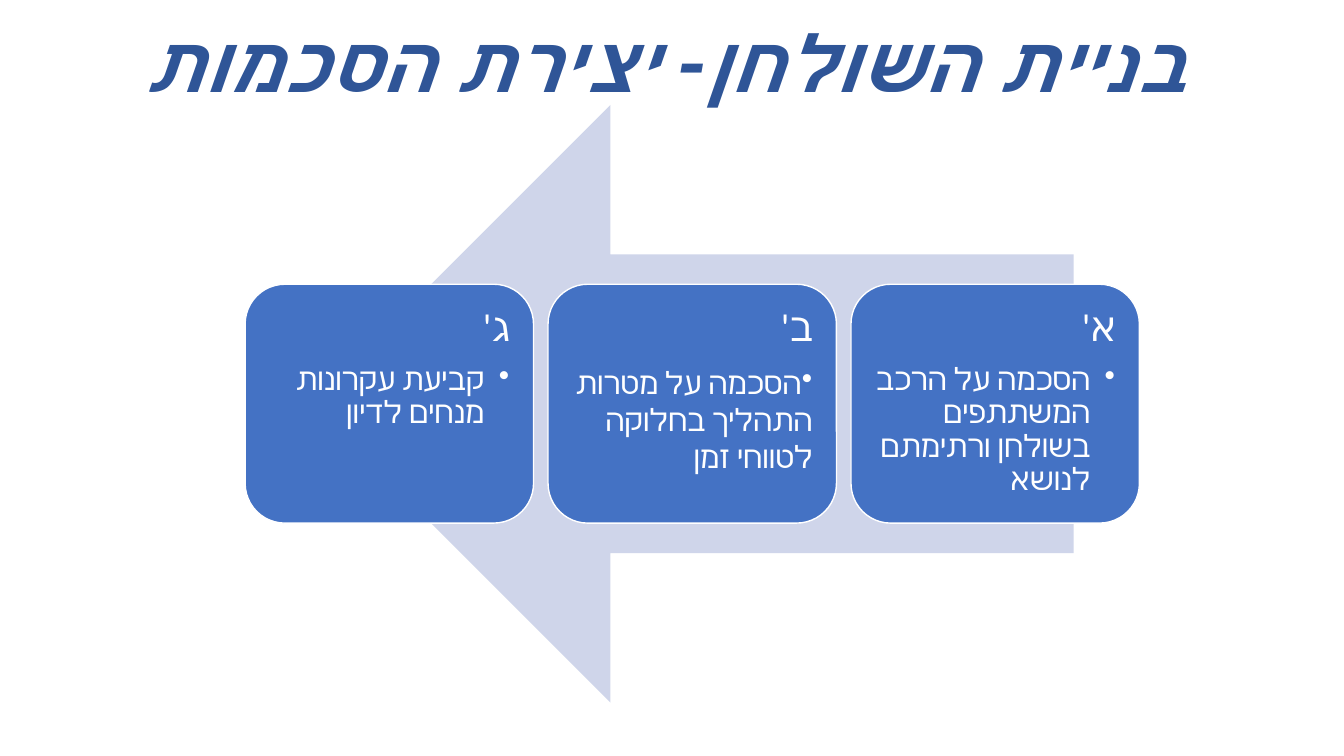
import dataclasses

import pptx
import pptx.dml.color
import pptx.enum.shapes
import pptx.enum.text
import pptx.oxml.ns
import pptx.util
from lxml import etree

Inches = pptx.util.Inches
Pt = pptx.util.Pt
Align = pptx.enum.text.PP_ALIGN
Anchor = pptx.enum.text.MSO_ANCHOR
Preset = pptx.enum.shapes.MSO_SHAPE
qn = pptx.oxml.ns.qn


@dataclasses.dataclass(frozen=True)
class Theme:
    title_color: str = "2F5597"
    arrow_color: str = "CFD5EA"
    card_color: str = "4472C4"
    white: str = "FFFFFF"
    title_font: str = "Roboto"
    body_font: str = "Calibri"
    title_size: int = 56
    heading_size: int = 28
    body_size: int = 22


def rgb(color):
    return pptx.dml.color.RGBColor.from_string(color)


def write(paragraph, text, *, font, size, color, bold=False, italic=False,
          align=Align.RIGHT, rtl=True, spacing=None, after=0, bullet=False, hang=0):
    """Fill a paragraph with one formatted run."""
    properties = paragraph._p.get_or_add_pPr()
    if rtl:
        properties.set("rtl", "1")
    if bullet:
        properties.set("marL", str(Inches(hang)))
        properties.set("indent", str(-Inches(hang)))
        etree.SubElement(properties, qn("a:buChar")).set("char", "•")
    paragraph.alignment = align
    paragraph.space_before = Pt(0)
    paragraph.space_after = Pt(after)
    if spacing:
        paragraph.line_spacing = spacing
    run = paragraph.add_run()
    run.text = text
    run.font.name = font
    run.font.size = Pt(size)
    run.font.bold = bold
    run.font.italic = italic
    run.font.color.rgb = rgb(color)
    # Hebrew takes the complex-script typeface
    etree.SubElement(run._r.get_or_add_rPr(), qn("a:cs")).set("typeface", font)


class SlideBuilder:
    """Places elements by percentages of the slide's width and height."""

    def __init__(self, presentation, theme):
        self.theme = theme
        self.width = presentation.slide_width
        self.height = presentation.slide_height
        self.slide = presentation.slides.add_slide(presentation.slide_layouts[6])

    def place(self, left, top, width, height):
        return (int(self.width * left / 100), int(self.height * top / 100),
                int(self.width * width / 100), int(self.height * height / 100))

    def title(self, text, area):
        box = self.slide.shapes.add_textbox(*self.place(*area))
        frame = box.text_frame
        frame.word_wrap = True
        frame.vertical_anchor = Anchor.MIDDLE
        frame.margin_right = Inches(0.45)
        write(frame.paragraphs[0], text, font=self.theme.title_font,
              size=self.theme.title_size, color=self.theme.title_color,
              bold=True, italic=True, align=Align.CENTER, rtl=False, spacing=0.7)

    def shape(self, preset, area, fill, line=None):
        shape = self.slide.shapes.add_shape(preset, *self.place(*area))
        shape.shadow.inherit = False
        shape.fill.solid()
        shape.fill.fore_color.rgb = rgb(fill)
        if line:
            shape.line.color.rgb = rgb(line)
            shape.line.width = Pt(1)
        else:
            shape.line.fill.background()
        return shape

    def card(self, heading, body, area, **body_format):
        theme = self.theme
        card = self.shape(Preset.ROUNDED_RECTANGLE, area, theme.card_color, theme.white)
        frame = card.text_frame
        frame.word_wrap = True
        frame.vertical_anchor = Anchor.TOP
        frame.margin_left = frame.margin_right = Inches(0.12)
        frame.margin_top = frame.margin_bottom = Inches(0.12)
        write(frame.paragraphs[0], heading, font=theme.body_font,
              size=theme.heading_size, color=theme.white, spacing=0.9, after=9.8)
        write(frame.add_paragraph(), body, font=theme.body_font,
              size=theme.body_size, color=theme.white, bullet=True, **body_format)


def main():
    presentation = pptx.Presentation()
    presentation.slide_width = Inches(13.33)
    presentation.slide_height = Inches(7.5)
    theme = Theme()
    builder = SlideBuilder(presentation, theme)

    # Title
    builder.title("בניית השולחן- יצירת הסכמות", (1.73, 0, 98.27, 19.33))

    # Arrow behind the steps
    builder.shape(Preset.LEFT_ARROW, (23.18, 13.87, 56.71, 79.07), theme.arrow_color)

    # Steps, from right to left
    hanging = dict(hang=0.25, spacing=0.9, after=3.3)
    steps = [
        ("א'", "הסכמה על הרכב המשתתפים בשולחן ורתימתם לנושא", hanging),
        ("ב'", "הסכמה על מטרות התהליך בחלוקה לטווחי זמן", {}),
        ("ג'", "קביעת עקרונות מנחים לדיון", hanging),
    ]
    first_left, pitch = 63.32, 22.54
    for index, (heading, body, body_format) in enumerate(steps):
        area = (first_left - index * pitch, 37.6, 21.46, 31.6)
        builder.card(heading, body, area, **body_format)

    presentation.save("out.pptx")


if __name__ == "__main__":
    main()
